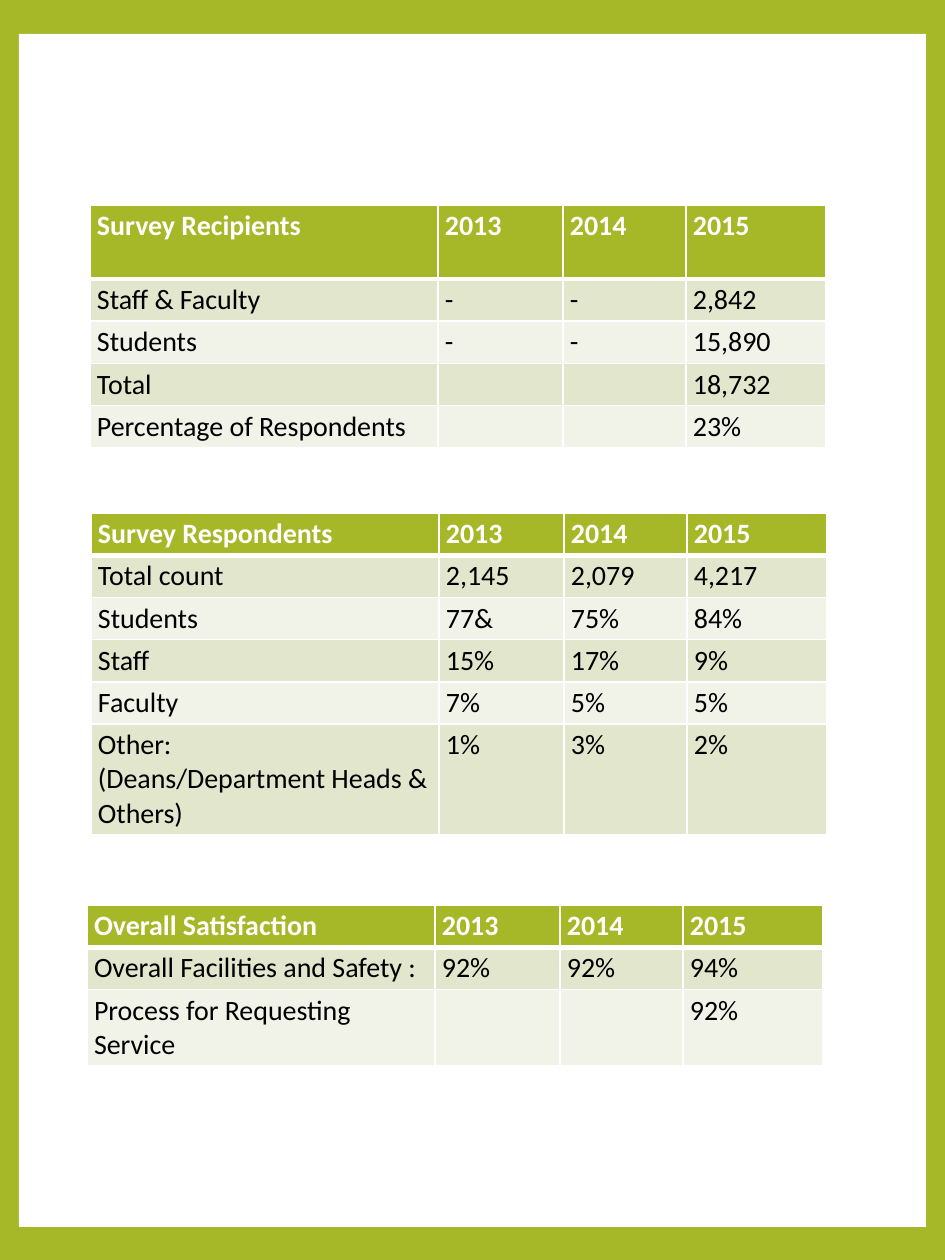
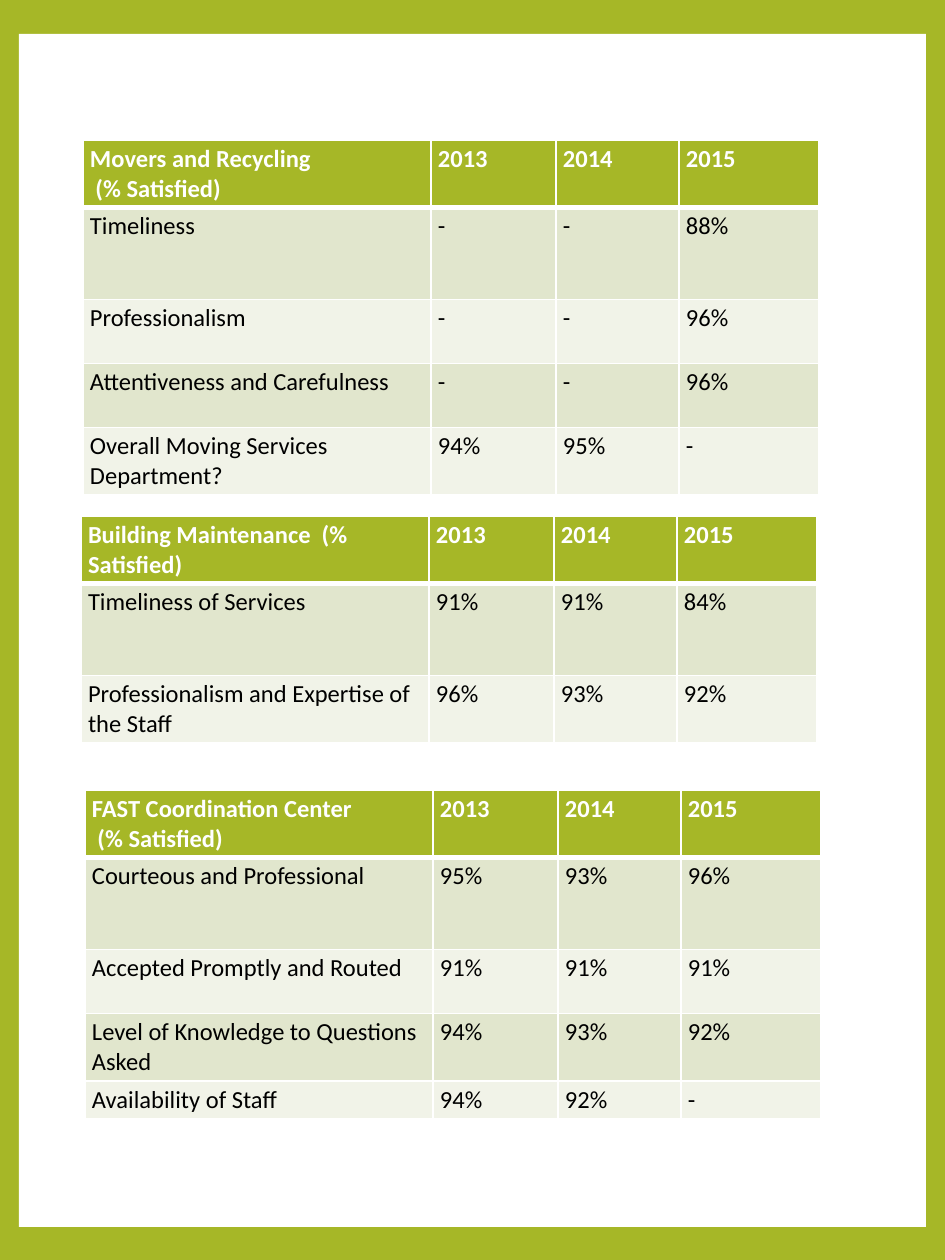
from lxml import etree
from pptx import Presentation
from pptx.dml.color import RGBColor
from pptx.enum.shapes import MSO_SHAPE
from pptx.oxml.ns import qn
from pptx.util import Emu, Pt

RECT = MSO_SHAPE.RECTANGLE
PX = 914400 / 126
PAGE = (945, 1260)
PANEL = (19, 34, 907, 1193)
COLUMNS = (348, 125, 123, 140)
MARGINS = {"margin_left": 7, "margin_right": 7, "margin_top": 4, "margin_bottom": 4}
YEARS = ("2013", "2014", "2015")

THEME = {
    "font": "Calibri",
    "green": "A6B727",
    "white": "FFFFFF",
    "text": "000000",
    "bands": ("E1E6CD", "F1F3E8"),
    "line": 1,
    "header_line": 3,
}

SLIDES = [
    {"size": 16, "tables": [
        {"at": (90, 205), "title": "Survey Recipients", "heights": (74, 41, 41, 41, 41), "rows": [
            ("Staff & Faculty", "-", "-", "2,842"),
            ("Students", "-", "-", "15,890"),
            ("Total", "", "", "18,732"),
            ("Percentage of Respondents", "", "", "23%"),
        ]},
        {"at": (91, 513), "title": "Survey Respondents", "heights": (41, 41, 41, 41, 41, 110), "rows": [
            ("Total count", "2,145", "2,079", "4,217"),
            ("Students", "77&", "75%", "84%"),
            ("Staff", "15%", "17%", "9%"),
            ("Faculty", "7%", "5%", "5%"),
            ("Other:\n(Deans/Department Heads & Others)", "1%", "3%", "2%"),
        ]},
        {"at": (87, 905), "title": "Overall Satisfaction", "heights": (41, 41, 75), "rows": [
            ("Overall Facilities and Safety :", "92%", "92%", "94%"),
            ("Process for Requesting Service", "", "", "92%"),
        ]},
    ]},
    {"size": 14, "tables": [
        {"at": (83, 140), "title": "Movers and Recycling\n (% Satisfied)", "heights": (66, 92, 64, 64, 65), "rows": [
            ("Timeliness", "-", "-", "88%"),
            ("Professionalism", "-", "-", "96%"),
            ("Attentiveness and Carefulness", "-", "-", "96%"),
            ("Overall Moving Services Department?", "94%", "95%", "-"),
        ]},
        {"at": (81, 516), "title": "Building Maintenance  (% Satisfied)", "heights": (66, 92, 66), "rows": [
            ("Timeliness of Services", "91%", "91%", "84%"),
            ("Professionalism and Expertise of the Staff", "96%", "93%", "92%"),
        ]},
        {"at": (85, 790), "title": "FAST Coordination Center\n (% Satisfied)", "heights": (66, 92, 64, 66, 36), "rows": [
            ("Courteous and Professional", "95%", "93%", "96%"),
            ("Accepted Promptly and Routed", "91%", "91%", "91%"),
            ("Level of Knowledge to Questions Asked", "94%", "93%", "92%"),
            ("Availability of Staff", "94%", "92%", "-"),
        ]},
    ]},
]


def px(n):
    return Emu(round(n * PX))


def paint(fill, color):
    fill.solid()
    fill.fore_color.rgb = RGBColor.from_string(color)


def add_master_panel(prs, s):
    master = prs.slide_master
    paint(master.background.fill, THEME["green"])
    panel = s.shapes.add_shape(RECT, *map(px, PANEL))
    panel.shadow.inherit = False
    panel.line.fill.background()
    paint(panel.fill, THEME["white"])
    master.shapes.element.insert(2, panel.element)


def add_borders(cell, top, bottom):
    tc_pr = cell._tc.get_or_add_tcPr()
    widths = {"lnL": THEME["line"], "lnR": THEME["line"], "lnT": top, "lnB": bottom}
    for side, width in widths.items():
        ln = etree.SubElement(tc_pr, qn("a:" + side), w=str(Pt(width)))
        fill = etree.SubElement(ln, qn("a:solidFill"))
        etree.SubElement(fill, qn("a:srgbClr"), val=THEME["white"])


def fill_cell(cell, text, row, size):
    header = row == 0
    line, thick = THEME["line"], THEME["header_line"]
    add_borders(cell, thick if row == 1 else line, thick if header else line)
    paint(cell.fill, THEME["green"] if header else THEME["bands"][(row - 1) % 2])
    for name, value in MARGINS.items():
        setattr(cell, name, px(value))
    cell.text = text
    for p in cell.text_frame.paragraphs:
        if not p.runs:
            etree.SubElement(p._p, qn("a:endParaRPr"), sz=str(size * 100))
        for r in p.runs:
            for name, value in {"name": THEME["font"], "size": Pt(size), "bold": header}.items():
                setattr(r.font, name, value)
            r.font.color.rgb = RGBColor.from_string(THEME["white" if header else "text"])


def add_survey_table(s, survey, size):
    rows = [(survey["title"], *YEARS)] + survey["rows"]
    box = (*survey["at"], sum(COLUMNS), sum(survey["heights"]))
    table = s.shapes.add_table(len(rows), len(COLUMNS), *map(px, box)).table
    for column, width in zip(table.columns, COLUMNS):
        column.width = px(width)
    for i, (values, height) in enumerate(zip(rows, survey["heights"])):
        table.rows[i].height = px(height)
        for j, text in enumerate(values):
            fill_cell(table.cell(i, j), text, i, size)


def main():
    prs = Presentation()
    prs.slide_width, prs.slide_height = map(px, PAGE)
    blank = prs.slide_layouts[6]
    for i, page in enumerate(SLIDES):
        s = prs.slides.add_slide(blank)
        if i == 0:
            add_master_panel(prs, s)
        for survey in page["tables"]:
            add_survey_table(s, survey, page["size"])
    prs.save("out.pptx")


if __name__ == "__main__":
    main()
